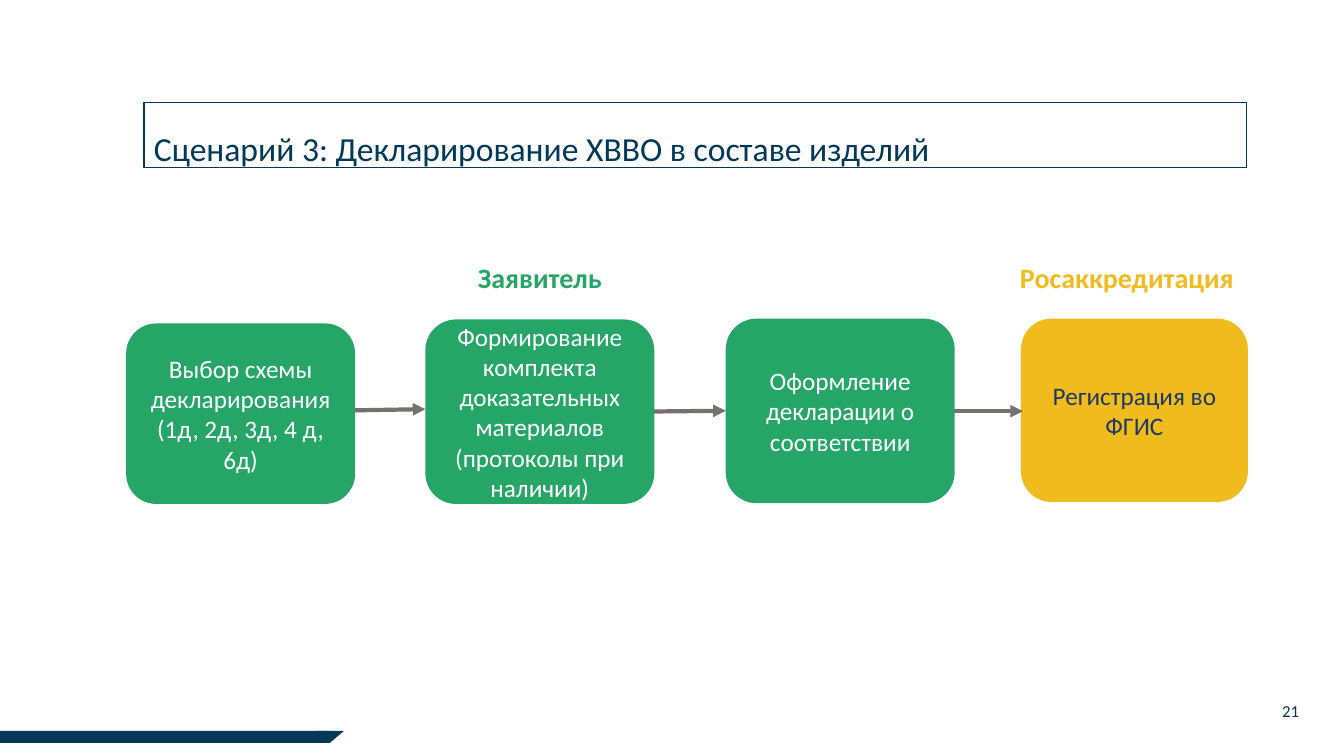
from lxml.etree import SubElement
from pptx import Presentation
from pptx.dml.color import RGBColor
from pptx.enum.shapes import MSO_CONNECTOR, MSO_SHAPE
from pptx.enum.text import MSO_ANCHOR, MSO_AUTO_SIZE, PP_ALIGN
from pptx.oxml.ns import qn
from pptx.util import Cm, Pt

NAVY = RGBColor(0x01, 0x38, 0x56)
TITLE_BLUE = RGBColor(0x01, 0x39, 0x58)
REGISTER_BLUE = RGBColor(0x20, 0x38, 0x64)
GREEN = RGBColor(0x25, 0xA6, 0x66)
YELLOW = RGBColor(0xF0, 0xBC, 0x1D)
GRAY = RGBColor(0x76, 0x71, 0x71)
WHITE = RGBColor(0xFF, 0xFF, 0xFF)

STEPS = [
    ("Выбор схемы декларирования (1д, 2д, 3д, 4 д, 6д)",
     (3.18, 8.15, 5.77, 4.55), GREEN, WHITE),
    ("Формирование комплекта доказательных материалов (протоколы при наличии)",
     (10.72, 8.05, 5.77, 4.65), GREEN, WHITE),
    ("Оформление декларации о соответствии",
     (18.29, 8.03, 5.77, 4.65), GREEN, WHITE),
    ("Регистрация во ФГИС",
     (25.73, 8.03, 5.72, 4.62), YELLOW, REGISTER_BLUE),
]
ARROWS = [
    (8.94, 10.34, 10.72, 10.31),
    (16.48, 10.37, 18.29, 10.35),
    (24.05, 10.36, 25.78, 10.36),
]
ROLES = [
    ("Заявитель", (11.56, 6.43, 4.09, 1.12), GREEN),
    ("Росаккредитация", (25.43, 6.43, 5.94, 1.12), YELLOW),
]


def write_text(shape, text, size, color, bold=False, align=PP_ALIGN.CENTER,
               anchor=MSO_ANCHOR.TOP, wrap=True, grow=False,
               line_spacing=None, space_after=None):
    frame = shape.text_frame
    frame.word_wrap = wrap
    frame.vertical_anchor = anchor
    frame.auto_size = MSO_AUTO_SIZE.SHAPE_TO_FIT_TEXT if grow else MSO_AUTO_SIZE.NONE
    paragraph = frame.paragraphs[0]
    paragraph.alignment = align
    paragraph.line_spacing = line_spacing
    paragraph.space_after = space_after
    run = paragraph.add_run()
    run.text = text
    run.font.name = "Calibri"
    run.font.size = Pt(size)
    run.font.bold = bold
    run.font.color.rgb = color


def add_block(slide, kind, box, fill=None, line=None):
    shape = slide.shapes.add_shape(kind, *map(Cm, box))
    shape.shadow.inherit = False
    if fill is None:
        shape.fill.background()
    else:
        shape.fill.solid()
        shape.fill.fore_color.rgb = fill
    if line is None:
        shape.line.fill.background()
    else:
        shape.line.color.rgb = line
        shape.line.width = Pt(0.75)
    return shape


def add_arrow(slide, ends):
    arrow = slide.shapes.add_connector(MSO_CONNECTOR.STRAIGHT, *map(Cm, ends))
    arrow.line.color.rgb = GRAY
    arrow.line.width = Pt(3)
    SubElement(arrow.line._get_or_add_ln(), qn("a:tailEnd"), type="triangle")
    SubElement(arrow._element.spPr, qn("a:effectLst"))


def add_footer(slide, left, top, width, height):
    tip_width = 0.71
    tip_left = left + width - tip_width / 2
    tip = add_block(slide, MSO_SHAPE.ISOSCELES_TRIANGLE,
                    (tip_left, top, tip_width, height), NAVY)
    tip.rotation = 180
    add_block(slide, MSO_SHAPE.RECTANGLE, (left, top, width, height), NAVY)
    number = slide.shapes.add_textbox(Cm(left + 30.02), Cm(top - 0.89), Cm(2.97), Cm(1.02))
    write_text(number, "21", 12, TITLE_BLUE, align=PP_ALIGN.RIGHT)


def add_title(slide, *box):
    title = add_block(slide, MSO_SHAPE.RECTANGLE, box, line=NAVY)
    write_text(title, "Сценарий 3: Декларирование ХВВО в составе изделий", 24,
               TITLE_BLUE, align=PP_ALIGN.JUSTIFY, grow=True,
               line_spacing=1.5, space_after=Pt(10))


def add_process(slide, left, top):
    def place(x, y, *size):
        return (left + x - 3.18, top + y - 6.43, *size)

    for text, box, fill, color in STEPS:
        step = add_block(slide, MSO_SHAPE.ROUNDED_RECTANGLE, place(*box), fill)
        write_text(step, text, 18, color, anchor=MSO_ANCHOR.MIDDLE)
    for x1, y1, x2, y2 in ARROWS:
        add_arrow(slide, place(x1, y1) + place(x2, y2))
    for text, box, color in ROLES:
        role = slide.shapes.add_textbox(*map(Cm, place(*box)))
        write_text(role, text, 20, color, bold=True, wrap=False, grow=True)


def main():
    presentation = Presentation()
    presentation.slide_width = Cm(33.87)
    presentation.slide_height = Cm(19.05)
    slide = presentation.slides.add_slide(presentation.slide_layouts[6])
    add_footer(slide, 0, 18.42, 8.31, 0.3)
    add_title(slide, 3.63, 2.59, 27.79, 1.63)
    add_process(slide, 3.18, 6.43)
    presentation.save("out.pptx")


if __name__ == "__main__":
    main()
